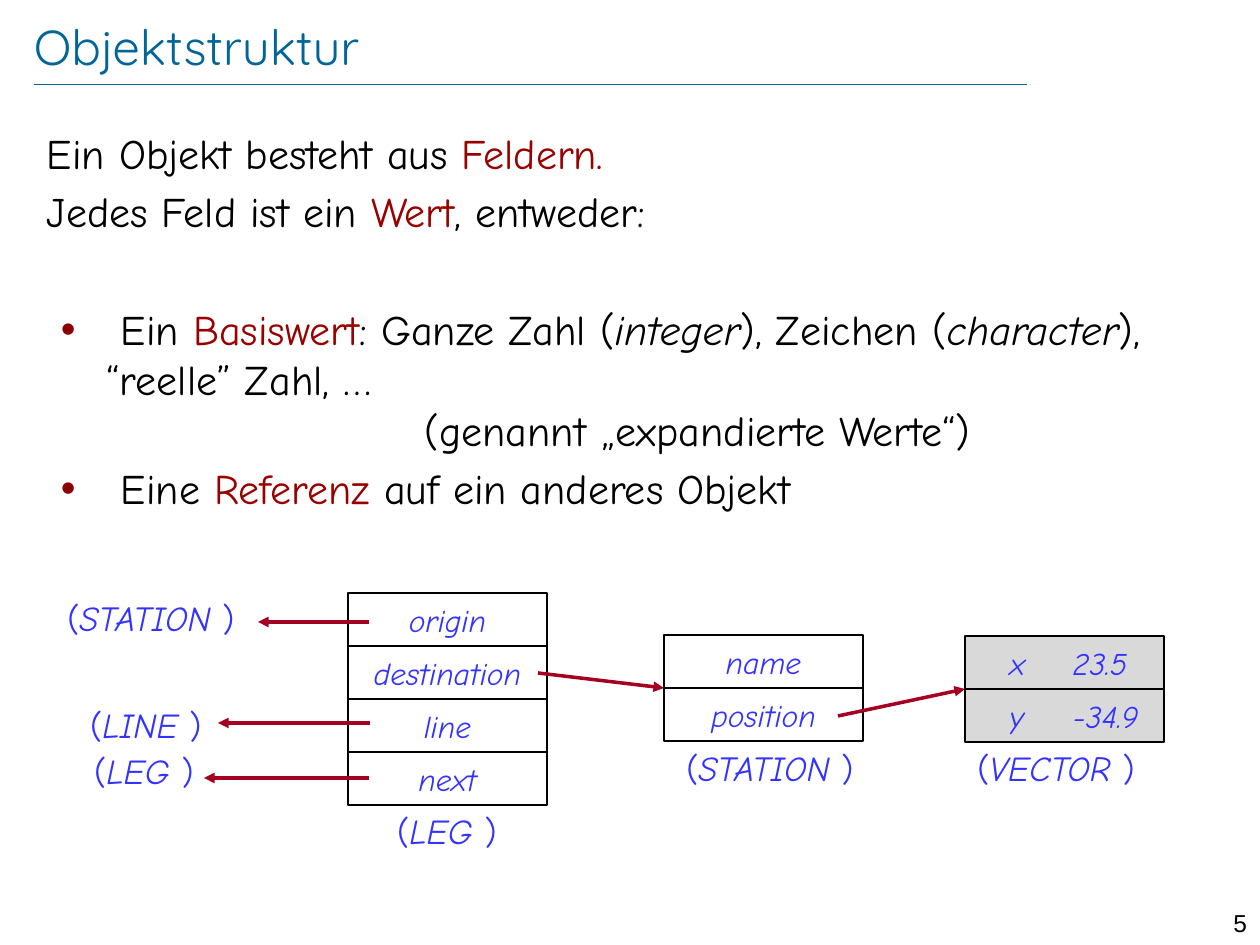
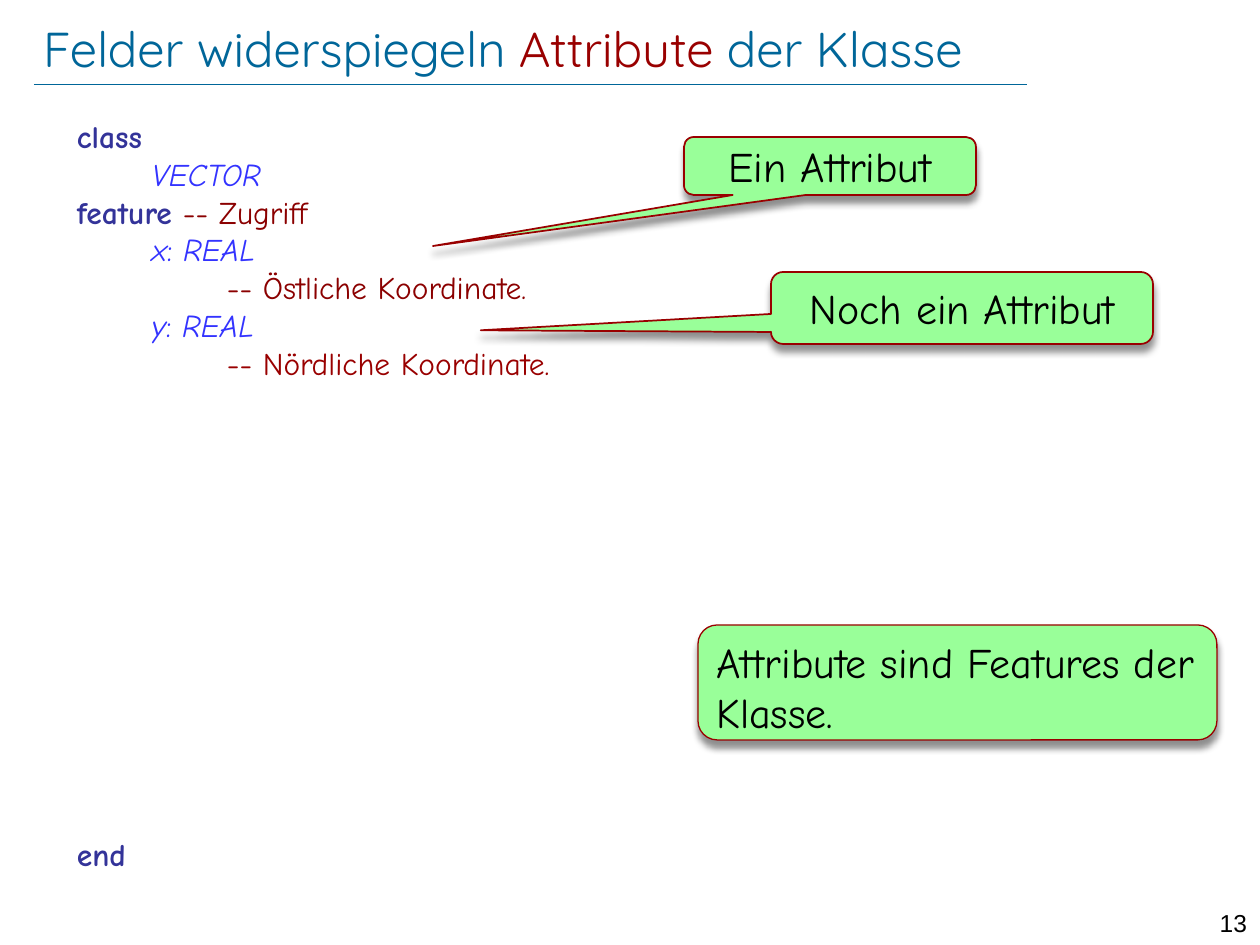
from lxml.etree import SubElement
from pptx import Presentation
from pptx.dml.color import RGBColor
from pptx.enum.shapes import MSO_CONNECTOR, MSO_SHAPE
from pptx.enum.text import MSO_ANCHOR as Anchor, PP_ALIGN as Align
from pptx.oxml.ns import qn
from pptx.util import Pt

BODY_FONT, TITLE_FONT, NUMBER_FONT = "Comic Neue", "Quicksand", "Arial"
BLACK, RED, DARK_RED, TEAL = "000000", "990000", "8B0000", "006699"
BLUE, NAVY, ARROW, GREEN, GREY = "3333FF", "333399", "A50021", "99FF99", "D9D9D9"
INSETS = (13, 6, 13, 6)

STYLES = {
    "plain": (BLACK, False, False),
    "italic": (BLACK, False, True),
    "term": (RED, False, False),
    "title": (TEAL, False, False),
    "keyword": (NAVY, True, False),
    "name": (BLUE, False, True),
    "sign": (BLUE, False, False),
    "comment": (DARK_RED, False, False),
}

STRUCTURE_TITLE = [("Objektstruktur", "title")]
STRUCTURE_TEXT = [
    dict(spans=[("Ein Objekt besteht aus ", "plain"), ("Feldern.", "term")]),
    dict(spans=[("Jedes Feld ist ein ", "plain"), ("Wert", "term"), (", entweder:", "plain")],
         before=4.8),
    dict(spans=[(" Ein ", "plain"), ("Basiswert", "term"), (": Ganze Zahl (", "plain"),
                ("integer", "italic"), ("), Zeichen (", "plain"), ("character", "italic"),
                ("), “reelle” Zahl, …", "plain")],
         before=38.4, margin=60, bullet=True),
    dict(spans=[("(genannt „expandierte Werte“)", "plain")], margin=378),
    dict(spans=[(" Eine ", "plain"), ("Referenz", "term"), (" auf ein anderes Objekt", "plain")],
         before=4.8, margin=60, bullet=True),
]
RECORDS = [
    (348, 593, None, ["origin", "destination", "line", "next"]),
    (664, 635, None, ["name", "position"]),
    (965, 636, GREY, ["x\t23.5", "y\t-34.9"]),
]
CELL_WIDTH, CELL_HEIGHT = 199, 53
TYPE_LABELS = [
    ("LEG", 447, 803), ("LEG", 144, 743), ("STATION", 770, 740),
    ("STATION", 151, 590), ("LINE", 146, 697), ("VECTOR", 1056, 740),
]
REFERENCES = [
    (369, 622, 258, 622), (538, 673, 664, 688), (370, 723, 218, 723),
    (369, 778, 204, 778), (838, 716, 965, 689),
]

ATTRIBUTE_TITLE = [("Felder widerspiegeln ", "title"), ("Attribute", "term"),
                   (" der Klasse", "title")]
CODE = [
    (0, [("class", "keyword")]),
    (1, [("VECTOR", "name")]),
    (0, [("feature ", "keyword"), ("-- Zugriff", "comment")]),
    (1, [("x", "name"), (":", "sign"), (" REAL", "name")]),
    (2, [("-- Östliche Koordinate.", "comment")]),
    (1, [("y", "name"), (":", "sign"), (" REAL", "name")]),
    (2, [("-- Nördliche Koordinate.", "term")]),
    (0, [("end", "keyword")]),
]
CODE_INDENT, GAP_BEFORE_END = 75, 259.2
CALLOUTS = [
    ("Noch ein Attribut", (771, 272, 382, 72), (-1.26, 0.31, 0.17)),
    ("Ein Attribut", (684, 137, 292, 58), (-1.36, 1.38, 0.17)),
]
SUMMARY = "Attribute sind Features der Klasse."


def px(length):
    return round(length * 914400 / 126)


def color(value):
    return RGBColor.from_string(value)


def add_spans(para, spans, size, font=BODY_FONT):
    for text, style in spans:
        span = para.add_run()
        span.text = text
        tone, bold, italic = STYLES[style]
        span.font.name, span.font.size = font, Pt(size)
        span.font.bold, span.font.italic = bold, italic
        span.font.color.rgb = color(tone)


def write(shape, paras, size, font=BODY_FONT, align=Align.LEFT, anchor=Anchor.TOP,
          insets=INSETS):
    frame = shape.text_frame
    frame.word_wrap = True
    frame.vertical_anchor = anchor
    frame.margin_left, frame.margin_top, frame.margin_right, frame.margin_bottom = map(px, insets)
    for index, entry in enumerate(paras):
        para = frame.add_paragraph() if index else frame.paragraphs[0]
        para.alignment = align
        if entry.get("before"):
            para.space_before = Pt(entry["before"])
        props = para._p.get_or_add_pPr()
        props.set("marL", str(px(entry.get("margin", 0))))
        props.set("indent", str(px(-46 if entry.get("bullet") else 0)))
        if entry.get("bullet"):
            tone = SubElement(props, qn("a:buClr"))
            SubElement(tone, qn("a:srgbClr"), val=DARK_RED)
            SubElement(props, qn("a:buFont"), typeface=NUMBER_FONT)
            SubElement(props, qn("a:buChar"), char="•")
        if entry.get("tab"):
            stops = SubElement(props, qn("a:tabLst"))
            SubElement(stops, qn("a:tab"), pos=str(px(entry["tab"])), algn="l")
        add_spans(para, entry["spans"], size, font)


def add_text(page, area, paras, size, **options):
    box = page.shapes.add_textbox(*map(px, area))
    write(box, paras, size, **options)


def add_panel(page, kind, area, fill, line, width):
    shape = page.shapes.add_shape(kind, *map(px, area))
    shape.shadow.inherit = False
    if fill:
        shape.fill.solid()
        shape.fill.fore_color.rgb = color(fill)
    else:
        shape.fill.background()
    shape.line.color.rgb = color(line)
    shape.line.width = Pt(width)
    return shape


def add_note(page, kind, area, width):
    note = add_panel(page, kind, area, GREEN, RED, width)
    effects = note._element.spPr.find(qn("a:effectLst"))
    shadow = SubElement(effects, qn("a:outerShdw"), blurRad=str(Pt(4)), dist=str(Pt(4)),
                        dir="5400000", algn="t", rotWithShape="0")
    tone = SubElement(shadow, qn("a:srgbClr"), val=BLACK)
    SubElement(tone, qn("a:alpha"), val="43000")
    return note


def add_line(page, ends, tone, width, arrow=False):
    line = page.shapes.add_connector(MSO_CONNECTOR.STRAIGHT, *map(px, ends))
    line.line.color.rgb = color(tone)
    line.line.width = Pt(width)
    if arrow:
        SubElement(line.line._get_or_add_ln(), qn("a:tailEnd"), type="triangle")
    SubElement(line._element.spPr, qn("a:effectLst"))


def add_page(deck, title, title_area, number):
    page = deck.slides.add_slide(deck.slide_layouts[6])
    add_line(page, (34, 84, 1027, 84), TEAL, 0.25)
    add_text(page, (1191, 902, 69, 30), [dict(spans=[(number, "plain")])], 14,
             font=NUMBER_FONT, align=Align.RIGHT)
    add_text(page, title_area, [dict(spans=title)], 28, font=TITLE_FONT,
             anchor=Anchor.MIDDLE, insets=(0, 0, 0, 0))
    return page


def add_record(page, left, top, fill, fields):
    for row, field in enumerate(fields):
        area = (left, top + row * CELL_HEIGHT, CELL_WIDTH, CELL_HEIGHT)
        cell = add_panel(page, MSO_SHAPE.RECTANGLE, area, fill, BLACK, 1.5)
        entry = dict(spans=[(field, "name")])
        if "\t" in field:
            entry["tab"] = 48
            layout = dict(align=Align.LEFT, insets=(45, 6, 0, 6))
        else:
            layout = dict(align=Align.CENTER)
        write(cell, [entry], 18, anchor=Anchor.MIDDLE, **layout)


def build_structure(deck):
    page = add_page(deck, STRUCTURE_TITLE, (34, 16, 1095, 60), "5")
    add_text(page, (34, 121, 1184, 777), STRUCTURE_TEXT, 24)
    for record in RECORDS:
        add_record(page, *record)
    for name, center, top in TYPE_LABELS:
        spans = [("(", "sign"), (name + " ", "name"), (")", "sign")]
        add_text(page, (center - 120, top, 240, 55), [dict(spans=spans)], 20, align=Align.CENTER)
    for ends in REFERENCES:
        add_line(page, ends, ARROW, 2, arrow=True)


def build_attributes(deck):
    page = add_page(deck, ATTRIBUTE_TITLE, (43, 16, 1089, 64), "13")
    summary = add_note(page, MSO_SHAPE.ROUNDED_RECTANGLE, (698, 625, 519, 115), 0.75)
    write(summary, [dict(spans=[(SUMMARY, "plain")])], 24)
    for text, area, adjustments in CALLOUTS:
        callout = add_note(page, MSO_SHAPE.ROUNDED_RECTANGULAR_CALLOUT, area, 1)
        for index, value in enumerate(adjustments):
            callout.adjustments[index] = value
        write(callout, [dict(spans=[(text, "plain")])], 24, align=Align.CENTER,
              anchor=Anchor.MIDDLE, insets=(0, 6, 0, 6))
    lines = [dict(spans=spans, margin=level * CODE_INDENT) for level, spans in CODE]
    lines[-1]["before"] = GAP_BEFORE_END
    add_text(page, (64, 111, 1160, 779), lines, 18)


def main():
    deck = Presentation()
    deck.slide_width, deck.slide_height = px(1260), px(945)
    build_structure(deck)
    build_attributes(deck)
    deck.save("out.pptx")


if __name__ == "__main__":
    main()
